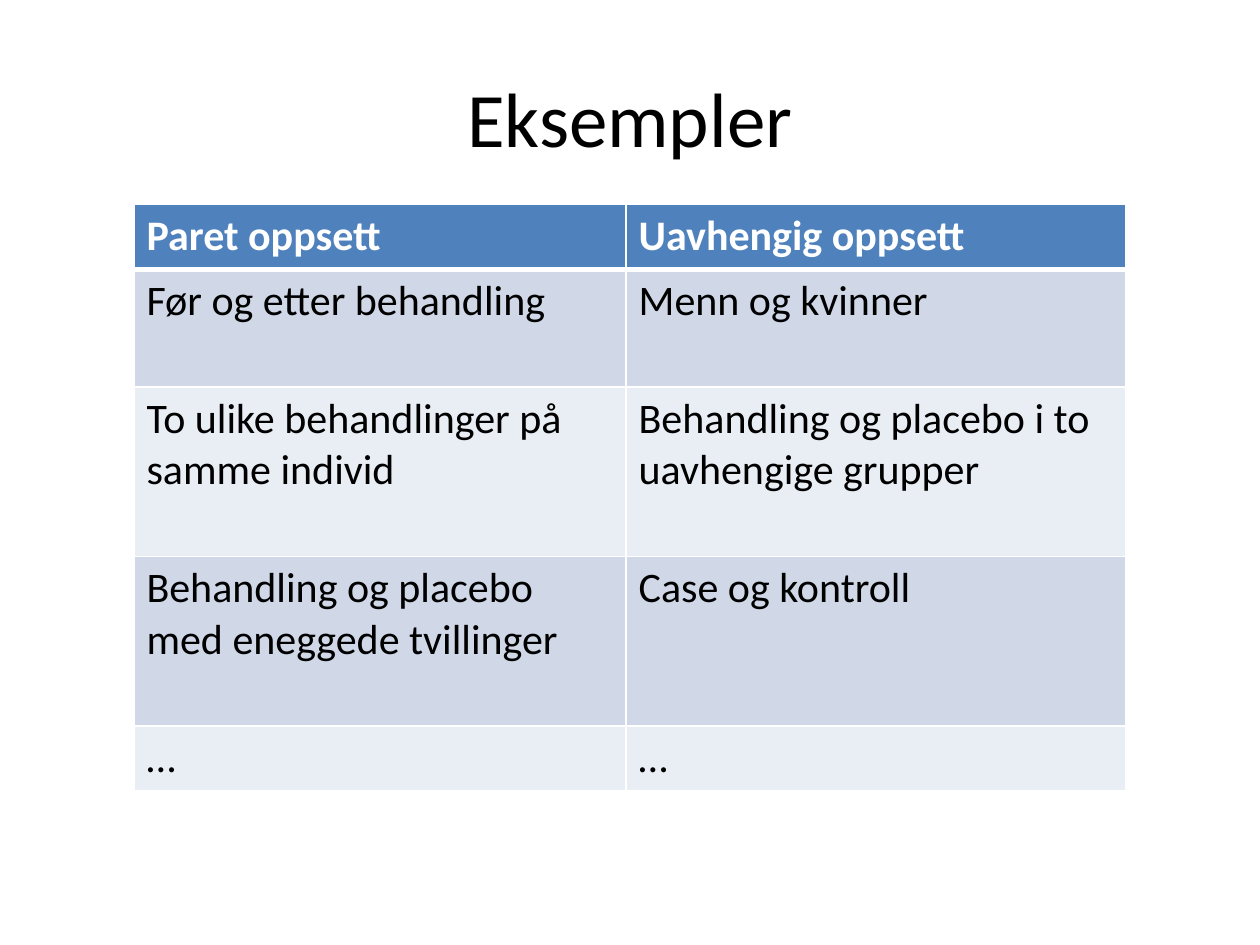
from dataclasses import dataclass

from lxml import etree
from pptx import Presentation
from pptx.dml.color import RGBColor
from pptx.enum.text import MSO_ANCHOR, PP_ALIGN
from pptx.oxml.ns import qn
from pptx.util import Cm, Pt

CENTER = PP_ALIGN.CENTER
MIDDLE = MSO_ANCHOR.MIDDLE
BLANK_LAYOUT = 6


@dataclass(frozen=True)
class Theme:
    font: str = "Calibri"
    title_size: int = 44
    table_size: int = 24
    text: str = "000000"
    header_text: str = "FFFFFF"
    header_fill: str = "4F81BD"
    bands: tuple = ("D0D8E8", "E9EDF4")
    border: str = "FFFFFF"
    border_width: int = 1
    header_rule_width: int = 3


class SlideBuilder:
    def __init__(self, slide, theme):
        self.slide = slide
        self.theme = theme

    def add_run(self, paragraph, text, size, color, bold=False):
        run = paragraph.add_run()
        run.text = text
        run.font.name = self.theme.font
        run.font.size = Pt(size)
        run.font.bold = bold
        run.font.color.rgb = RGBColor.from_string(color)

    def add_title(self, text, left, top, width, height):
        box = self.slide.shapes.add_textbox(Cm(left), Cm(top), Cm(width), Cm(height))
        frame = box.text_frame
        frame.word_wrap = True
        frame.vertical_anchor = MIDDLE
        paragraph = frame.paragraphs[0]
        paragraph.alignment = CENTER
        self.add_run(paragraph, text, self.theme.title_size, self.theme.text)

    def add_borders(self, cell, top_width, bottom_width):
        side_width = self.theme.border_width
        widths = {"L": side_width, "R": side_width, "T": top_width, "B": bottom_width}
        properties = cell._tc.get_or_add_tcPr()
        for side, width in widths.items():
            line = etree.SubElement(properties, qn(f"a:ln{side}"), w=str(Pt(width)))
            fill = etree.SubElement(line, qn("a:solidFill"))
            etree.SubElement(fill, qn("a:srgbClr"), val=self.theme.border)

    def add_table(self, rows, left, top, column_widths, row_heights):
        """Add a table with a header row and alternating bands below it."""
        theme = self.theme
        table = self.slide.shapes.add_table(
            len(rows), len(column_widths), Cm(left), Cm(top),
            Cm(sum(column_widths)), Cm(sum(row_heights)),
        ).table
        for column, width in zip(table.columns, column_widths):
            column.width = Cm(width)
        for row_index, (labels, height) in enumerate(zip(rows, row_heights)):
            table.rows[row_index].height = Cm(height)
            is_header = row_index == 0
            fill = theme.header_fill if is_header else theme.bands[(row_index - 1) % 2]
            color = theme.header_text if is_header else theme.text
            top_width = theme.header_rule_width if row_index == 1 else theme.border_width
            bottom_width = theme.header_rule_width if is_header else theme.border_width
            for column_index, label in enumerate(labels):
                cell = table.cell(row_index, column_index)
                # Borders must precede the fill in the cell properties.
                self.add_borders(cell, top_width, bottom_width)
                cell.fill.solid()
                cell.fill.fore_color.rgb = RGBColor.from_string(fill)
                paragraph = cell.text_frame.paragraphs[0]
                self.add_run(paragraph, label, theme.table_size, color, is_header)


def main():
    presentation = Presentation()
    presentation.slide_width = Cm(25.4)
    presentation.slide_height = Cm(19.05)
    slide = presentation.slides.add_slide(presentation.slide_layouts[BLANK_LAYOUT])
    builder = SlideBuilder(slide, Theme())

    builder.add_title("Eksempler", left=1.27, top=0.76, width=22.86, height=3.18)

    study_designs = [
        ("Paret oppsett", "Uavhengig oppsett"),
        ("Før og etter behandling", "Menn og kvinner"),
        ("To ulike behandlinger på samme individ",
         "Behandling og placebo i to uavhengige grupper"),
        ("Behandling og placebo med eneggede tvillinger", "Case og kontroll"),
        ("…", "…"),
    ]
    single, double, triple = 1.31, 2.37, 3.42
    builder.add_table(
        study_designs, left=2.7, top=4.12,
        column_widths=(9.92, 10.08),
        row_heights=(single, double, triple, triple, single),
    )
    presentation.save("out.pptx")


if __name__ == "__main__":
    main()
